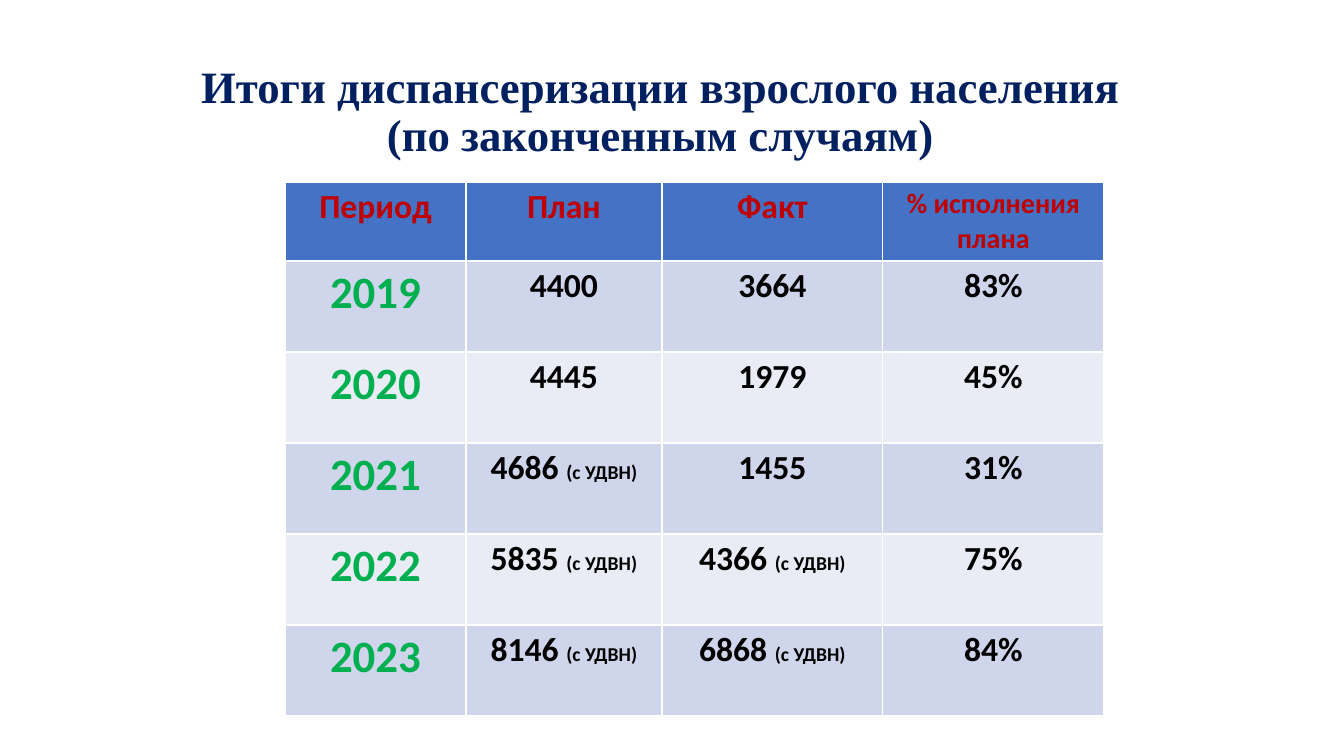
from pptx import Presentation
from pptx.dml.color import RGBColor
from pptx.enum.text import MSO_ANCHOR, PP_ALIGN
from pptx.util import Emu, Pt

COLORS = {
    "title": "002060",
    "header_text": "C00000",
    "year": "00B050",
    "value": "000000",
    "header": "4472C4",
    "odd_row": "CFD5EA",
    "even_row": "E9EBF5",
}
NOTE = "(с УДВН)"
HEADINGS = ["Период", "План", "Факт", "% исполнения плана"]
RESULTS = [
    ["2019", "4400", "3664", "83%"],
    ["2020", "4445", "1979", "45%"],
    ["2021", f"4686 {NOTE}", "1455", "31%"],
    ["2022", f"5835 {NOTE}", f"4366 {NOTE}", "75%"],
    ["2023", f"8146 {NOTE}", f"6868 {NOTE}", "84%"],
]
COLUMN_WIDTHS = [181, 196, 221, 221]
ROW_HEIGHTS = [79] + [91] * len(RESULTS)


def px(count):
    """Turn pixels, 100.8 to the inch, into EMU."""
    return Emu(round(count * 914400 / 100.8))


def add_span(para, text, size, color, font="Calibri"):
    span = para.add_run()
    span.text = text
    span.font.name = font
    span.font.size = Pt(size)
    span.font.bold = True
    span.font.color.rgb = RGBColor.from_string(COLORS[color])


deck = Presentation()
deck.slide_width, deck.slide_height = px(1344), px(756)
page = deck.slides.add_slide(deck.slide_layouts[5])

title = page.shapes.title
title.left, title.top, title.width, title.height = px(27), px(40), px(1257), px(146)
frame = title.text_frame
frame.word_wrap = True
frame.vertical_anchor = MSO_ANCHOR.MIDDLE
frame.margin_left = px(20)
para = frame.paragraphs[0]
para.alignment = PP_ALIGN.CENTER
para.line_spacing = 0.9
add_span(para, "Итоги диспансеризации взрослого населения", 32, "title", "Times New Roman")
para.add_line_break()
add_span(para, "(по законченным случаям)", 32, "title", "Times New Roman")

table = page.shapes.add_table(
    len(ROW_HEIGHTS), len(COLUMN_WIDTHS),
    px(285), px(182), px(sum(COLUMN_WIDTHS)), px(sum(ROW_HEIGHTS)),
).table
for column, width in zip(table.columns, COLUMN_WIDTHS):
    column.width = px(width)
for row, height in zip(table.rows, ROW_HEIGHTS):
    row.height = px(height)

for row_index, texts in enumerate([HEADINGS] + RESULTS):
    if row_index == 0:
        fill = "header"
    else:
        fill = "odd_row" if row_index % 2 else "even_row"
    for column_index, text in enumerate(texts):
        cell = table.cell(row_index, column_index)
        cell.fill.solid()
        cell.fill.fore_color.rgb = RGBColor.from_string(COLORS[fill])
        para = cell.text_frame.paragraphs[0]
        para.alignment = PP_ALIGN.CENTER
        if row_index == 0:
            add_span(para, text, 20 if column_index == 3 else 24, "header_text")
        elif column_index == 0:
            add_span(para, text, 32, "year")
        else:
            number, note, _ = text.partition(NOTE)
            add_span(para, number, 24, "value")
            if note:
                add_span(para, note, 14, "value")

deck.save("out.pptx")
